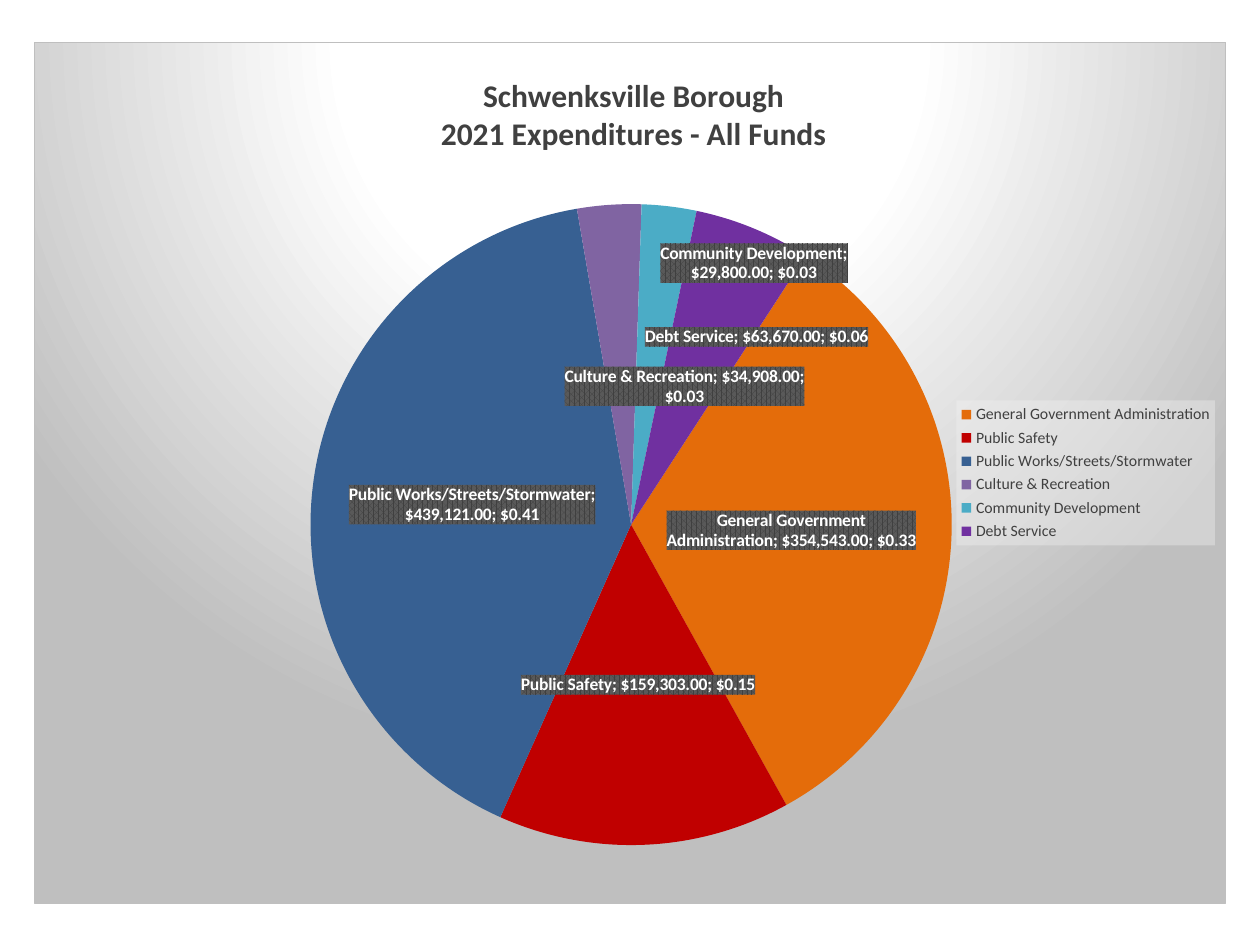
from copy import deepcopy

from pptx import Presentation
from pptx import util as u
from pptx.chart.data import CategoryChartData
from pptx.dml.color import RGBColor
from pptx.enum import chart as ch
from pptx.oxml import parse_xml
from pptx.oxml.ns import nsdecls

EXPENDITURES = [
    ("General Government Administration", 354543, "E46C0A"),
    ("Public Safety", 159303, "C00000"),
    ("Public Works/Streets/Stormwater", 439121, "376092"),
    ("Culture & Recreation", 34908, "8064A2"),
    ("Community Development", 29800, "4BACC6"),
    ("Debt Service", 63670, "7030A0"),
]
# Label shifts for the thin slices, as shares of the chart's size
LABEL_SHIFTS = {3: (0.054, 0.025), 4: (0.087, -0.119), 5: (0.054, -0.046)}
TITLE_LINES = ["Schwenksville Borough", "2021 Expenditures - All Funds"]

BACKDROP = """<a:gradFill><a:gsLst>
  <a:gs pos="0"><a:srgbClr val="FFFFFF"/></a:gs>
  <a:gs pos="39000"><a:srgbClr val="FFFFFF"/></a:gs>
  <a:gs pos="100000"><a:srgbClr val="BFBFBF"/></a:gs></a:gsLst>
  <a:path path="circle"><a:fillToRect l="50000" t="-80000" r="50000" b="180000"/></a:path>
</a:gradFill>
<a:ln w="9525"><a:solidFill><a:srgbClr val="BFBFBF"/></a:solidFill></a:ln>"""
LABEL_FILL = """<a:pattFill prst="pct75"><a:fgClr><a:srgbClr val="404040"/></a:fgClr>
  <a:bgClr><a:srgbClr val="595959"/></a:bgClr></a:pattFill><a:ln><a:noFill/></a:ln>"""
LEGEND_FILL = """<a:solidFill><a:srgbClr val="F2F2F2"><a:alpha val="39000"/></a:srgbClr>
  </a:solidFill><a:ln><a:noFill/></a:ln>"""


def color(hex_value):
    return RGBColor.from_string(hex_value)


def chart_xml(tag, content="", attributes=""):
    return parse_xml(f"<c:{tag} {nsdecls('c', 'a')} {attributes}>{content}</c:{tag}>")


def layout(**values):
    parts = "".join(f'<c:{key} val="{value}"/>' for key, value in values.items())
    return chart_xml("layout", f"<c:manualLayout>{parts}</c:manualLayout>")


def set_layout(parent, position, new_layout):
    for old in parent.xpath("c:layout"):
        parent.remove(old)
    parent.insert(position, new_layout)


class ExpenditureSlide:
    font_name = "Calibri"
    ink = "404040"

    def __init__(self, deck):
        self.deck = deck
        self.slide = deck.slides.add_slide(deck.slide_layouts[6])

    def style(self, font, size, hex_value, bold=False):
        font.name, font.size, font.bold = self.font_name, u.Pt(size), bold
        font.color.rgb = color(hex_value)

    def pie(self, left, top, width, height):
        """Add the pie in a frame given as shares of the slide's size."""
        data = CategoryChartData(number_format='"$"#,##0.00')
        names, amounts, slice_colors = zip(*EXPENDITURES)
        data.categories = names
        data.add_series("Series 1", amounts)
        across, down = self.deck.slide_width, self.deck.slide_height
        chart = self.slide.shapes.add_chart(
            ch.XL_CHART_TYPE.PIE, int(left * across), int(top * down),
            int(width * across), int(height * down), data).chart
        self.style(chart.font, 10, "000000")
        chart.element.xpath("c:chart")[0].addnext(chart_xml("spPr", BACKDROP))

        plot = chart.plots[0]
        plot.vary_by_categories = True
        for index, hex_value in enumerate(slice_colors):
            fill = plot.series[0].points[index].format.fill
            fill.solid()
            fill.fore_color.rgb = color(hex_value)
        chart.element.xpath(".//c:pieChart")[0].append(
            chart_xml("firstSliceAng", attributes='val="33"'))
        set_layout(chart.element.xpath(".//c:plotArea")[0], 0, layout(
            layoutTarget="inner", xMode="edge", yMode="edge",
            x=0.231, y=0.188, w=0.54, h=0.744))
        return chart

    def title(self, chart, lines):
        chart.has_title = True
        frame = chart.chart_title.text_frame
        for index, line in enumerate(lines):
            paragraph = frame.add_paragraph() if index else frame.paragraphs[0]
            paragraph.text = line
            self.style(paragraph.font, 18, self.ink, bold=True)
        set_layout(chart.element.xpath("c:chart/c:title")[0], 1, layout(
            xMode="edge", yMode="edge", x=0.338, y=0.033))

    def legend(self, chart):
        chart.has_legend = True
        legend = chart.legend
        legend.position = ch.XL_LEGEND_POSITION.RIGHT
        legend.include_in_layout = False
        self.style(legend.font, 9, self.ink)
        chart.element.xpath(".//c:legend/c:txPr")[0].addprevious(
            chart_xml("spPr", LEGEND_FILL))

    def labels(self, chart, shifts):
        """Label every slice, moving those listed in shifts off their centre."""
        labels = chart.plots[0].series[0].data_labels
        labels.show_value = labels.show_percentage = labels.show_category_name = True
        labels.number_format = '"$"#,##0.00'
        labels.number_format_is_linked = False
        labels.position = ch.XL_LABEL_POSITION.CENTER
        self.style(labels.font, 10, "FFFFFF", bold=True)

        group = chart.element.xpath(".//c:ser/c:dLbls")[0]
        group.xpath("c:txPr")[0].addprevious(chart_xml("spPr", LABEL_FILL))
        separator = parse_xml(f"<c:separator {nsdecls('c')}>; </c:separator>")
        group.xpath("c:showBubbleSize|c:showPercent")[-1].addnext(separator)
        shared = group.xpath("*[not(self::c:showLeaderLines)]")
        for position, (index, (x, y)) in enumerate(shifts.items()):
            label = chart_xml("dLbl", f'<c:idx val="{index}"/>')
            label.append(layout(x=x, y=y))
            label.extend(deepcopy(part) for part in shared)
            group.insert(position, label)


def main():
    deck = Presentation()
    deck.slide_width, deck.slide_height = u.Inches(10), u.Inches(7.5)
    page = ExpenditureSlide(deck)
    chart = page.pie(0.027, 0.044, 0.946, 0.913)
    page.title(chart, TITLE_LINES)
    page.legend(chart)
    page.labels(chart, LABEL_SHIFTS)
    deck.save("out.pptx")


if __name__ == "__main__":
    main()
